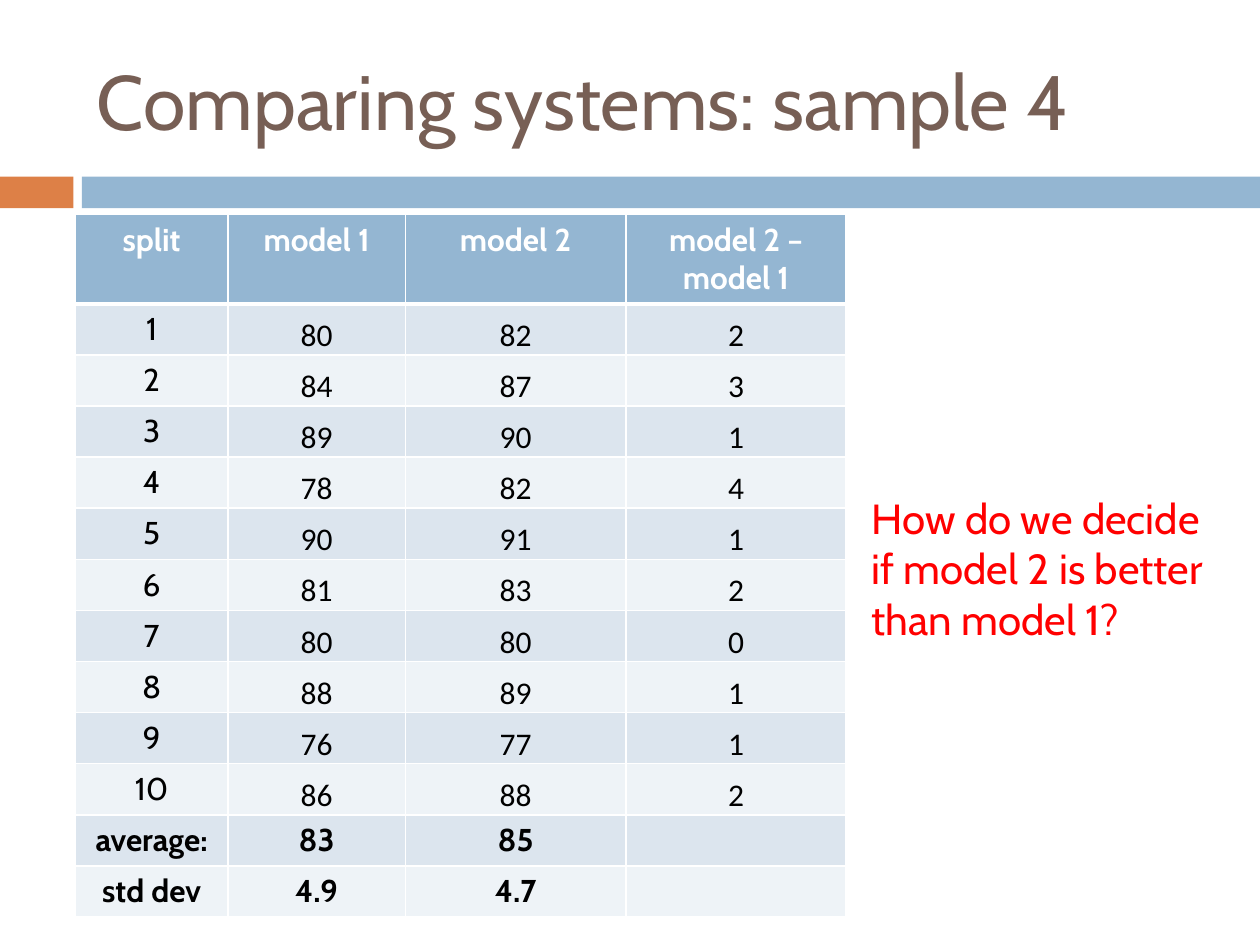
from lxml.etree import SubElement
from pptx import Presentation
from pptx.dml.color import RGBColor
from pptx.enum.shapes import MSO_SHAPE as Shape
from pptx.enum.text import MSO_ANCHOR as Anchor, PP_ALIGN as Align
from pptx.oxml.ns import qn
from pptx.util import Cm, Pt

BLUE, ORANGE, BROWN = "94B6D2", "DD8047", "775F55"
BANDS = ("DCE5EE", "EEF3F7")
HEADER = ("split", "model 1", "model 2", "model 2 – model 1")
SCORES = ((80, 82), (84, 87), (89, 90), (78, 82), (90, 91),
          (81, 83), (80, 80), (88, 89), (76, 77), (86, 88))
SUMMARY = (("average:", "83", "85", ""), ("std dev", "4.9", "4.7", ""))


def rgb(hex_color):
    return RGBColor.from_string(hex_color)


def style(paragraph, size, color, font="Cabin", bold=False, align=Align.LEFT):
    paragraph.alignment = align
    for run in paragraph.runs:
        run.font.size = Pt(size)
        run.font.name = font
        run.font.bold = bold
        run.font.color.rgb = rgb(color)


def add_title(slide, left, top, width, height):
    title = slide.shapes.title
    title.left, title.top, title.width, title.height = map(Cm, (left, top, width, height))
    title.text_frame.text = "Comparing systems: sample 4"
    title.text_frame.vertical_anchor = Anchor.MIDDLE
    style(title.text_frame.paragraphs[0], 44, BROWN)


def add_banner(slide, left, top, width, height):
    tab, gap = 1.48, 0.17
    bar_start = tab + gap
    for offset, length, color in ((0, tab, ORANGE), (bar_start, width - bar_start, BLUE)):
        bar = slide.shapes.add_shape(
            Shape.RECTANGLE, Cm(left + offset), Cm(top), Cm(length), Cm(height))
        bar.shadow.inherit = False
        bar.fill.solid()
        bar.fill.fore_color.rgb = rgb(color)
        bar.line.fill.background()


def set_borders(cell, top=1, bottom=1):
    properties = cell._tc.get_or_add_tcPr()
    for side, points in (("L", 1), ("R", 1), ("T", top), ("B", bottom)):
        line = SubElement(properties, qn(f"a:ln{side}"), w=str(Pt(points)))
        SubElement(SubElement(line, qn("a:solidFill")), qn("a:srgbClr"), val="FFFFFF")


def add_scores(slide, left, top, width, height):
    splits = [(n, first, second, second - first)
              for n, (first, second) in enumerate(SCORES, 1)]
    rows = [HEADER, *splits, *SUMMARY]
    table = slide.shapes.add_table(
        len(rows), len(HEADER), Cm(left), Cm(top), Cm(width), Cm(height)).table
    for column, share in zip(table.columns, (1.21, 1.41, 1.75, 1.75)):
        column.width = Cm(width * share / 6.12)
    header_height = 1.79
    for r, values in enumerate(rows):
        is_header, is_split = r == 0, 0 < r <= len(splits)
        table.rows[r].height = Cm(
            header_height if is_header else (height - header_height) / (len(rows) - 1))
        for c, value in enumerate(values):
            cell = table.cell(r, c)
            is_score = is_split and c > 0
            set_borders(cell, top=3 if r == 1 else 1, bottom=3 if is_header else 1)
            cell.fill.solid()
            cell.fill.fore_color.rgb = rgb(BLUE if is_header else BANDS[(r - 1) % 2])
            cell.text_frame.text = str(value)
            style(cell.text_frame.paragraphs[0], 18,
                  "FFFFFF" if is_header else "000000",
                  "Calibri" if is_score else "Cabin", not is_split, Align.CENTER)
            if is_score:
                cell.vertical_anchor = Anchor.BOTTOM
                cell.margin_left = cell.margin_right = cell.margin_top = Cm(0.03)
                cell.margin_bottom = 0


def add_question(slide, left, top, width, height):
    question = slide.shapes.add_textbox(Cm(left), Cm(top), Cm(width), Cm(height))
    question.text_frame.word_wrap = True
    question.text_frame.text = "How do we decide if model 2 is better than model 1?"
    style(question.text_frame.paragraphs[0], 24, "FF0000")


def main():
    deck = Presentation()
    deck.slide_width, deck.slide_height = Cm(25.4), Cm(19.05)
    slide = deck.slides.add_slide(deck.slide_layouts.get_by_name("Title Only"))
    add_banner(slide, 0, 3.56, 25.4, 0.64)
    add_title(slide, 1.7, 0.64, 22.66, 2.74)
    add_scores(slide, 1.52, 4.32, 15.54, 14.15)
    add_question(slide, 17.32, 9.8, 7.59, 3.33)
    deck.save("out.pptx")


if __name__ == "__main__":
    main()
